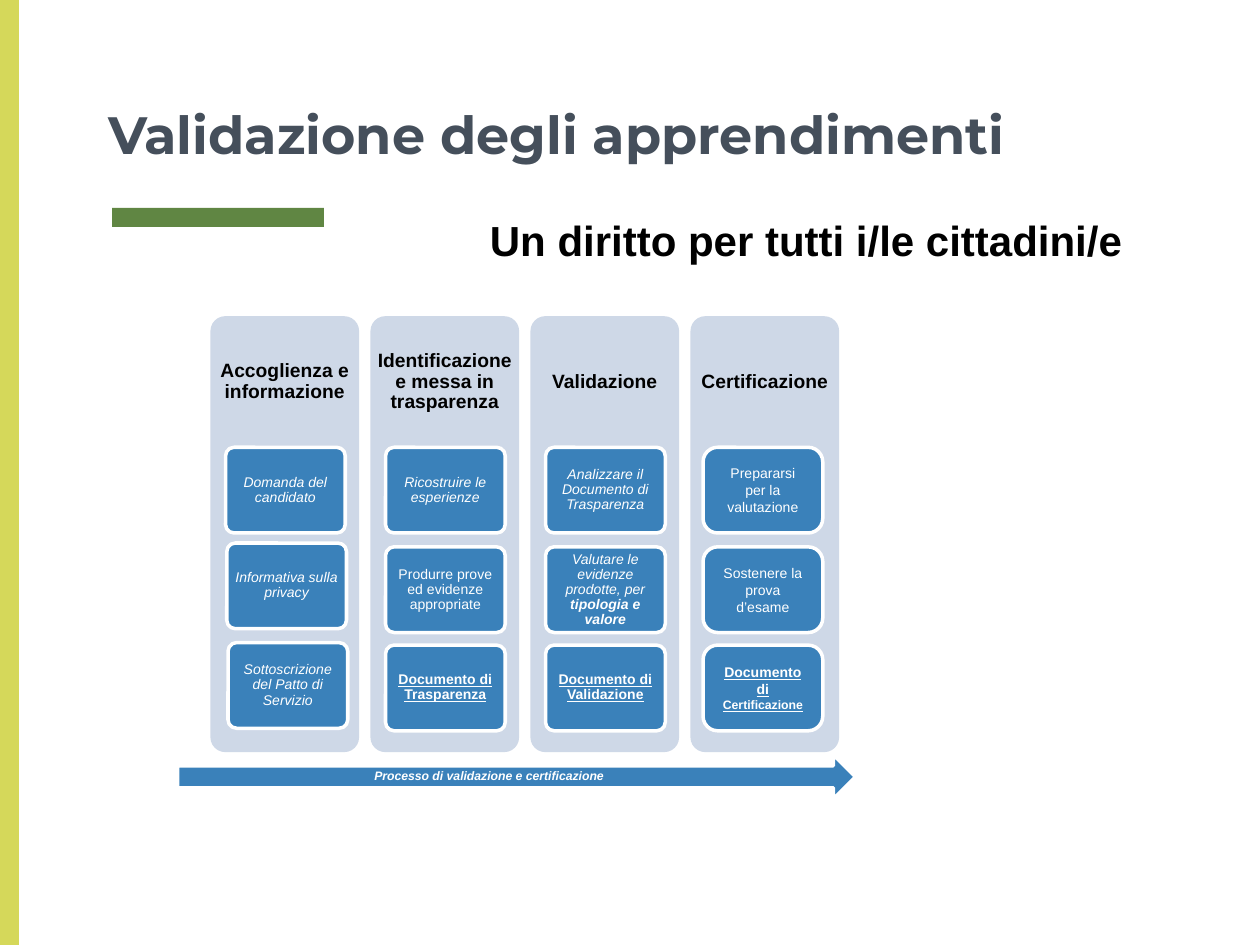
from pptx import Presentation
from pptx.dml.color import RGBColor
from pptx.enum.shapes import MSO_SHAPE
from pptx.enum.text import MSO_ANCHOR, MSO_AUTO_SIZE, PP_ALIGN
from pptx.util import Inches, Pt

BLUE, PALE, WHITE, BLACK = "3A81BA", "CED8E7", "FFFFFF", "000000"
GREEN, LIME, SLATE = "608643", "D5D85A", "454F5B"

ITALIC = {"italic": True}
BOLD = {"bold": True}
BOLD_ITALIC = {"bold": True, "italic": True}
OUTCOME = {"bold": True, "underline": True}

PHASE_LEFT, PHASE_TOP, PHASE_STEP = 1.67, 2.51, 1.27
PHASE_WIDTH, PHASE_HEIGHT, HEADING_HEIGHT = 1.18, 3.46, 1.04
STEP_TOPS = (3.55, 4.34, 5.12)
STEP_WIDTH, STEP_HEIGHT = 0.95, 0.68

# Each phase: heading, then its steps as lists of (text, format) runs
PHASES = [
    ("Accoglienza e informazione", [
        [("Domanda del candidato", ITALIC)],
        [("Informativa sulla privacy", ITALIC)],
        [("Sottoscrizione del Patto di Servizio", ITALIC)],
    ]),
    ("Identificazione e messa in trasparenza", [
        [("Ricostruire le esperienze", ITALIC)],
        [("Produrre prove ed evidenze appropriate", {})],
        [("Documento di Trasparenza", OUTCOME)],
    ]),
    ("Validazione", [
        [("Analizzare il Documento di Trasparenza", ITALIC)],
        [("Valutare le evidenze prodotte, per ", ITALIC),
         ("tipologia e valore", BOLD_ITALIC)],
        [("Documento di Validazione", OUTCOME)],
    ]),
    ("Certificazione", [
        [("Prepararsi per la valutazione", {})],
        [("Sostenere la prova d’esame", {})],
        [("Documento di ", OUTCOME),
         ("Certificazione", {**OUTCOME, "size": Pt(7)})],
    ]),
]
# Small shifts (x, y) of the first phase's steps
FIRST_PHASE_SHIFTS = ((0, 0), (0.01, -0.03), (0.02, -0.02))


def rgb(value):
    return RGBColor.from_string(value)


def write(frame, runs, size, color, align=PP_ALIGN.CENTER, anchor=MSO_ANCHOR.MIDDLE,
          insets=(0.1, 0.05, 0.1, 0.05), spacing=0.9, font="Arial", wrap=True):
    """Fill a text frame with one paragraph; insets are left, top, right, bottom."""
    sides = ("margin_left", "margin_top", "margin_right", "margin_bottom")
    layout = {"word_wrap": wrap, "auto_size": MSO_AUTO_SIZE.NONE, "vertical_anchor": anchor,
              **{side: Inches(inset) for side, inset in zip(sides, insets)}}
    for name, value in layout.items():
        setattr(frame, name, value)
    paragraph = frame.paragraphs[0]
    paragraph.alignment = align
    paragraph.line_spacing = spacing
    for text, run_format in runs:
        run = paragraph.add_run()
        run.text = text
        run.font.color.rgb = rgb(color)
        for name, value in {"name": font, "size": Pt(size), **run_format}.items():
            setattr(run.font, name, value)


def add_block(slide, kind, box, fill, outline=None, corner=None):
    block = slide.shapes.add_shape(kind, *map(Inches, box))
    block.shadow.inherit = False
    block.fill.solid()
    block.fill.fore_color.rgb = rgb(fill)
    if outline:
        block.line.color.rgb = rgb(outline)
        block.line.width = Pt(2)
    else:
        block.line.fill.background()
    if corner is not None:
        block.adjustments[0] = corner
    return block


def add_label(slide, box, text, size, **options):
    label = slide.shapes.add_textbox(*map(Inches, box))
    write(label.text_frame, [(text, BOLD)], size, BLACK, **options)


def add_title(slide, text):
    title = slide.shapes.title
    for name, value in zip(("left", "top", "width", "height"), (0.76, 0, 8.49, 1.41)):
        setattr(title, name, Inches(value))
    write(title.text_frame, [(text, BOLD)], 30, SLATE, align=PP_ALIGN.LEFT,
          anchor=MSO_ANCHOR.BOTTOM, insets=(0.1,) * 4, spacing=1, font="Montserrat")


def add_step(slide, left, top, runs, corner=0.1, **options):
    step = add_block(slide, MSO_SHAPE.ROUNDED_RECTANGLE,
                     (left, top, STEP_WIDTH, STEP_HEIGHT), BLUE, WHITE, corner)
    write(step.text_frame, runs, 8, WHITE, **options)


def add_phase(slide, index, heading, steps):
    left = PHASE_LEFT + index * PHASE_STEP
    add_block(slide, MSO_SHAPE.ROUNDED_RECTANGLE,
              (left, PHASE_TOP, PHASE_WIDTH, PHASE_HEIGHT), PALE, corner=0.1)
    add_label(slide, (left, PHASE_TOP, PHASE_WIDTH, HEADING_HEIGHT), heading, 11,
              insets=(0.05,) * 4)
    is_last = index == len(PHASES) - 1
    shifts = FIRST_PHASE_SHIFTS if index == 0 else ((0, 0),) * len(steps)
    for runs, top, (dx, dy) in zip(steps, STEP_TOPS, shifts):
        if is_last:
            add_step(slide, left + 0.1, top, runs, corner=0.17, spacing=1)
        else:
            add_step(slide, left + 0.12 + dx, top + dy, runs, insets=(0.02,) * 4)


def add_process_arrow(slide, text):
    arrow = add_block(slide, MSO_SHAPE.RIGHT_ARROW, (1.41, 5.99, 5.38, 0.35), BLUE, WHITE)
    write(arrow.text_frame, [(text, BOLD_ITALIC)], 7, WHITE, insets=(0, 0, 0.35, 0))


def main():
    presentation = Presentation()
    presentation.slide_width = Inches(10)
    presentation.slide_height = Inches(7.5)
    slide = presentation.slides.add_slide(presentation.slide_layouts[5])

    add_block(slide, MSO_SHAPE.RECTANGLE, (0.89, 1.65, 1.68, 0.15), GREEN)
    add_block(slide, MSO_SHAPE.RECTANGLE, (0, 0, 0.15, 7.5), LIME)
    add_title(slide, "Validazione degli apprendimenti")
    add_label(slide, (3.79, 1.65, 5.26, 0.5), "Un diritto per tutti i/le cittadini/e", 24,
              align=PP_ALIGN.LEFT, anchor=MSO_ANCHOR.TOP, spacing=1, wrap=False)
    for index, (heading, steps) in enumerate(PHASES):
        add_phase(slide, index, heading, steps)
    add_process_arrow(slide, "Processo di validazione e certificazione")

    presentation.save("out.pptx")


if __name__ == "__main__":
    main()
